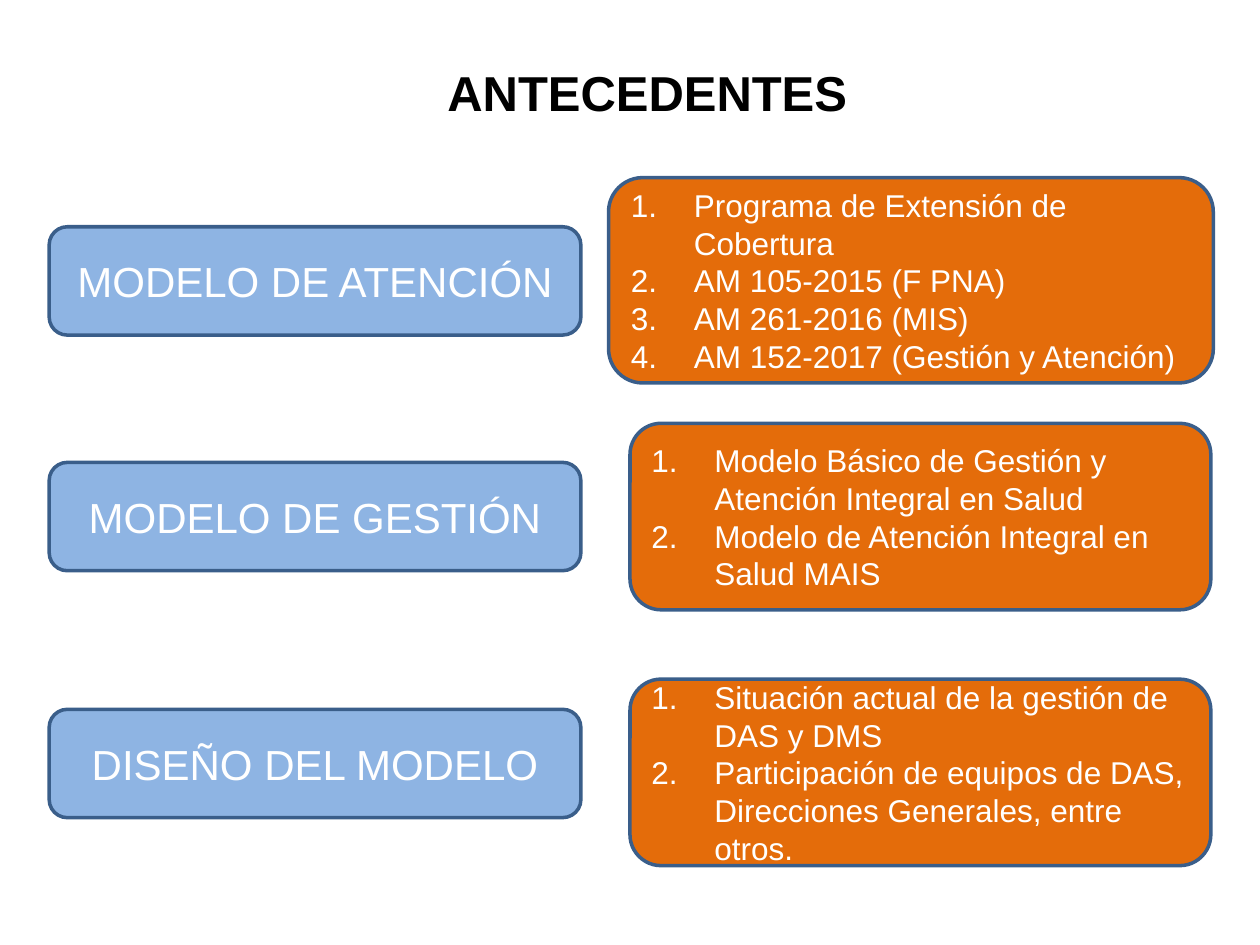
from pptx import Presentation
from pptx.dml.color import RGBColor
from pptx.enum.shapes import MSO_SHAPE
from pptx.enum.text import MSO_ANCHOR, PP_ALIGN
from pptx.oxml.ns import qn
from pptx.util import Inches, Pt

ROUNDED = MSO_SHAPE.ROUNDED_RECTANGLE
MIDDLE = MSO_ANCHOR.MIDDLE
CENTER, LEFT = PP_ALIGN.CENTER, PP_ALIGN.LEFT
COLORS = {"title": "000000", "text": "FFFFFF", "label": "8EB4E3",
          "detail": "E46C0A", "line": "3A5E8A"}
LABEL_LEFT, LABEL_WIDTH, LABEL_HEIGHT = 0.39, 4.22, 0.86
ROWS = [
    ("MODELO DE ATENCIÓN", 1.8, (4.83, 1.41, 4.8, 1.63),
     ["Programa de Extensión de Cobertura", "AM 105-2015 (F PNA)",
      "AM 261-2016 (MIS)", "AM 152-2017 (Gestión y Atención)"]),
    ("MODELO DE GESTIÓN", 3.67, (5, 3.36, 4.61, 1.48),
     ["Modelo Básico de Gestión y Atención Integral en Salud",
      "Modelo de Atención Integral en Salud MAIS"]),
    ("DISEÑO DEL MODELO", 5.63, (5, 5.39, 4.61, 1.48),
     ["Situación actual de la gestión de DAS y DMS",
      "Participación de equipos de DAS, Direcciones Generales, entre otros."]),
]


class SlideBuilder:
    """Draws the title, labels and numbered boxes of one slide in a shared style."""

    font_name = "Arial"

    def __init__(self, slide):
        self.slide = slide

    def prepare_frame(self, shape, side, vertical):
        frame = shape.text_frame
        frame.word_wrap = True
        frame.vertical_anchor = MIDDLE
        frame.margin_left = frame.margin_right = Inches(side)
        frame.margin_top = frame.margin_bottom = Inches(vertical)
        return frame

    def add_text(self, paragraph, text, size, color, alignment, bold=False):
        paragraph.alignment = alignment
        run = paragraph.add_run()
        run.text = text
        run.font.name = self.font_name
        run.font.size = Pt(size)
        run.font.bold = bold
        run.font.color.rgb = RGBColor.from_string(COLORS[color])

    def title(self, text, box):
        shape = self.slide.shapes.add_textbox(*map(Inches, box))
        paragraph = self.prepare_frame(shape, 0.04, 0.04).paragraphs[0]
        paragraph.line_spacing = 0.9
        self.add_text(paragraph, text, 28, "title", CENTER, bold=True)

    def rounded_box(self, box, fill):
        shape = self.slide.shapes.add_shape(ROUNDED, *map(Inches, box))
        shape.shadow.inherit = False
        shape.fill.solid()
        shape.fill.fore_color.rgb = RGBColor.from_string(COLORS[fill])
        shape.line.color.rgb = RGBColor.from_string(COLORS["line"])
        shape.line.width = Pt(2)
        return shape

    def label(self, text, box):
        frame = self.prepare_frame(self.rounded_box(box, "label"), 0.05, 0.05)
        self.add_text(frame.paragraphs[0], text, 24, "text", CENTER)

    def numbered_box(self, items, box):
        frame = self.prepare_frame(self.rounded_box(box, "detail"), 0.1, 0)
        for index, item in enumerate(items):
            paragraph = frame.add_paragraph() if index else frame.paragraphs[0]
            properties = paragraph._p.get_or_add_pPr()
            properties.set("marL", str(Inches(0.5)))
            properties.set("indent", str(Inches(-0.5)))
            numbering = properties.makeelement(qn("a:buAutoNum"), {"type": "arabicPeriod"})
            properties.append(numbering)
            self.add_text(paragraph, item, 18, "text", LEFT)


def main():
    presentation = Presentation()
    presentation.slide_width = Inches(10)
    presentation.slide_height = Inches(7.5)
    builder = SlideBuilder(presentation.slides.add_slide(presentation.slide_layouts[6]))
    builder.title("ANTECEDENTES ", (1.95, 0.48, 6.48, 0.55))
    for name, label_top, detail_box, items in ROWS:
        builder.label(name, (LABEL_LEFT, label_top, LABEL_WIDTH, LABEL_HEIGHT))
        builder.numbered_box(items, detail_box)
    presentation.save("out.pptx")


if __name__ == "__main__":
    main()
